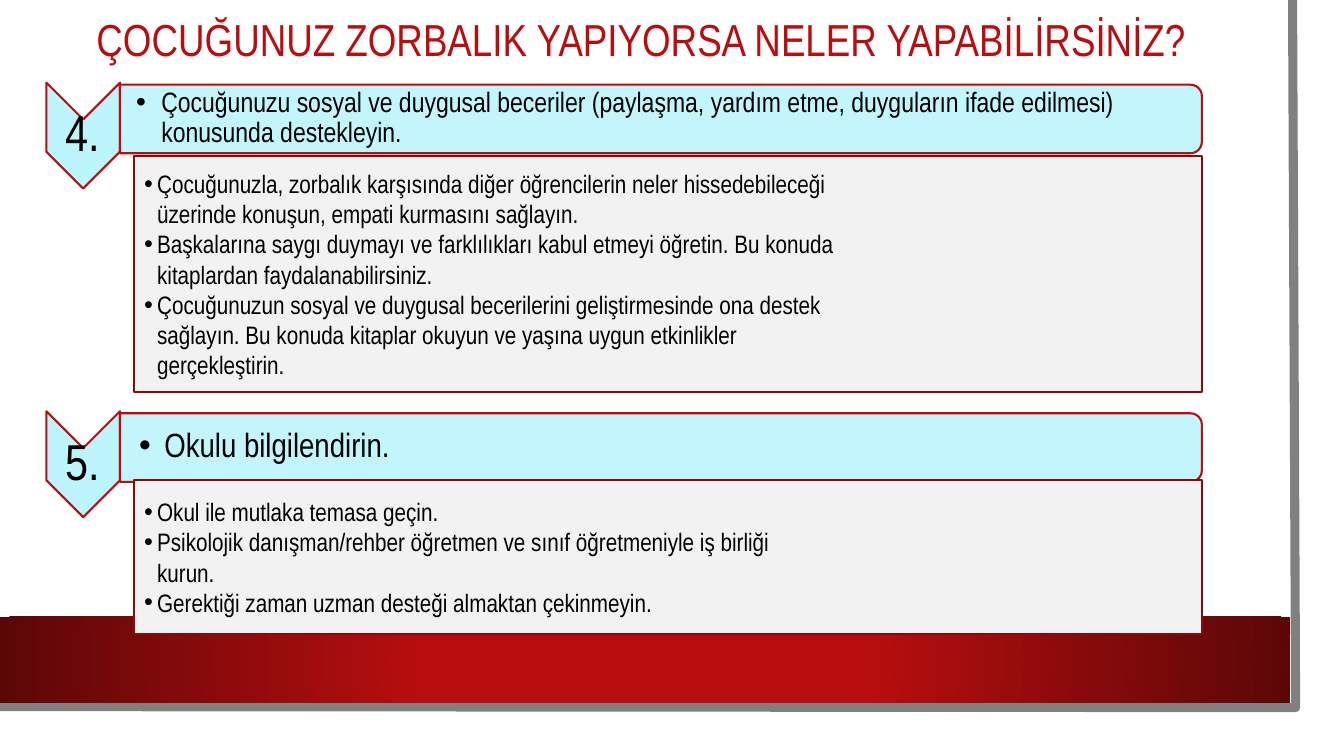
from lxml import etree
from pptx import Presentation
from pptx.dml.color import RGBColor
from pptx.enum.shapes import MSO_SHAPE
from pptx.enum.text import MSO_ANCHOR, MSO_AUTO_SIZE, PP_ALIGN
from pptx.oxml import parse_xml
from pptx.oxml.ns import nsdecls, qn
from pptx.util import Inches, Pt

COLORS = {"red": "B80E0F", "dark_red": "5C0707", "panel_line": "880A0B", "cyan": "BDF5FD",
          "panel": "F2F2F2", "gray": "808080", "black": "000000"}
SECTIONS = [
    {"number": "4.", "top": 0.82, "size": 20, "inset": 0.16, "panel": (1.55, 2.34),
     "heading": "Çocuğunuzu sosyal ve duygusal beceriler (paylaşma, yardım etme, "
                "duyguların ifade edilmesi) konusunda destekleyin.",
     "advice": ["Çocuğunuzla, zorbalık karşısında diğer öğrencilerin neler hissedebileceği\v"
                "üzerinde konuşun, empati kurmasını sağlayın.",
                "Başkalarına saygı duymayı ve farklılıkları kabul etmeyi öğretin. Bu konuda\v"
                "kitaplardan faydalanabilirsiniz.",
                "Çocuğunuzun sosyal ve duygusal becerilerini geliştirmesinde ona destek\v"
                "sağlayın. Bu konuda kitaplar okuyun ve yaşına uygun etkinlikler\v"
                "gerçekleştirin."]},
    {"number": "5.", "top": 4.08, "size": 24, "inset": 0.19, "panel": (4.76, 1.53),
     "heading": "Okulu bilgilendirin.",
     "advice": ["Okul ile mutlaka temasa geçin.",
                "Psikolojik danışman/rehber öğretmen ve sınıf öğretmeniyle iş birliği\vkurun.",
                "Gerektiği zaman uzman desteği almaktan çekinmeyin."]},
]


def write(shape, lines, size, color="black", align=PP_ALIGN.LEFT, spacing=1.0, hang=0, inset=None):
    frame = shape.text_frame
    frame.word_wrap = True
    frame.auto_size = MSO_AUTO_SIZE.NONE
    frame.vertical_anchor = MSO_ANCHOR.MIDDLE
    if inset is not None:
        frame.margin_left = Inches(inset)
        frame.margin_top = frame.margin_right = frame.margin_bottom = Inches(0.02)
    for index, line in enumerate(lines):
        para = frame.paragraphs[0] if index == 0 else frame.add_paragraph()
        para.text = line
        para.alignment = align
        para.line_spacing = spacing
        if hang:
            properties = para._p.get_or_add_pPr()
            properties.set("marL", str(Inches(hang)))
            properties.set("indent", str(-Inches(hang)))
            etree.SubElement(properties, qn("a:buFont")).set("typeface", "Arial")
            etree.SubElement(properties, qn("a:buChar")).set("char", "•")
        for span in para.runs:
            span.font.name = "Arial Narrow"
            span.font.size = Pt(size)
            span.font.color.rgb = RGBColor.from_string(COLORS[color])


def add_outlined(kind, left, top, width, height, fill, line, rotation=0):
    if rotation:
        left, top = left + (width - height) / 2, top + (height - width) / 2
        width, height = height, width
    shape = page.shapes.add_shape(kind, Inches(left), Inches(top), Inches(width), Inches(height))
    shape.rotation = rotation
    shape.shadow.inherit = False
    shape.fill.solid()
    shape.fill.fore_color.rgb = RGBColor.from_string(COLORS[fill])
    shape.line.color.rgb = RGBColor.from_string(COLORS[line])
    shape.line.width = Pt(1.5)
    return shape


deck = Presentation()
deck.slide_width, deck.slide_height = Inches(13.33), Inches(7.5)
page = deck.slides.add_slide(deck.slide_layouts[5])

builder = page.shapes.build_freeform(Inches(12.82), 0)
builder.add_line_segments([(Inches(12.85), Inches(7.02)), (0, Inches(7.01))], close=False)
edge = builder.convert_to_shape()
edge.shadow.inherit = False
edge.fill.background()
edge.line.color.rgb = RGBColor.from_string(COLORS["gray"])
edge.line.width = Pt(6.5)

band = add_outlined(MSO_SHAPE.RECTANGLE, 0, 6.12, 12.8, 0.85, "red", "red")
band.line.fill.background()
solid = band._element.spPr.find(qn("a:solidFill"))
solid.getparent().replace(solid, parse_xml(
    f'<a:gradFill {nsdecls("a")} rotWithShape="1"><a:gsLst>'
    f'<a:gs pos="34000"><a:srgbClr val="{COLORS["red"]}"/></a:gs>'
    f'<a:gs pos="100000"><a:srgbClr val="{COLORS["dark_red"]}"/></a:gs></a:gsLst>'
    '<a:path path="circle"><a:fillToRect l="50000" t="50000" r="50000" b="50000"/></a:path>'
    '</a:gradFill>'))

title = page.shapes.title
title.left, title.top, title.width, title.height = map(Inches, (0.68, 0.12, 11.37, 0.6))
write(title, ["ÇOCUĞUNUZ ZORBALIK YAPIYORSA NELER YAPABİLİRSİNİZ?"], 32, "red", PP_ALIGN.CENTER, 0.9)

for section in SECTIONS:
    top = section["top"]
    add_outlined(MSO_SHAPE.CHEVRON, 0.46, top, 0.73, 1.05, "cyan", "red", 90)
    number = page.shapes.add_textbox(Inches(0.46), Inches(top + 0.37), Inches(0.73), Inches(0.31))
    write(number, [section["number"]], 36, align=PP_ALIGN.CENTER, spacing=0.9, inset=0.02)

    bar = add_outlined(MSO_SHAPE.ROUND_2_SAME_RECTANGLE, 1.19, top + 0.02, 10.73, 0.68,
                       "cyan", "red", 90)
    tint = bar._element.spPr.find(qn("a:solidFill")).find(qn("a:srgbClr"))
    etree.SubElement(tint, qn("a:alpha")).set("val", "90000")
    heading = page.shapes.add_textbox(Inches(1.19), Inches(top + 0.05), Inches(10.7), Inches(0.61))
    write(heading, [section["heading"]], section["size"], spacing=0.9, hang=0.25,
          inset=section["inset"])

    panel_top, panel_height = section["panel"]
    panel = add_outlined(MSO_SHAPE.RECTANGLE, 1.33, panel_top, 10.59, panel_height,
                         "panel", "panel_line")
    write(panel, section["advice"], 18, hang=0.13)

deck.save("out.pptx")
